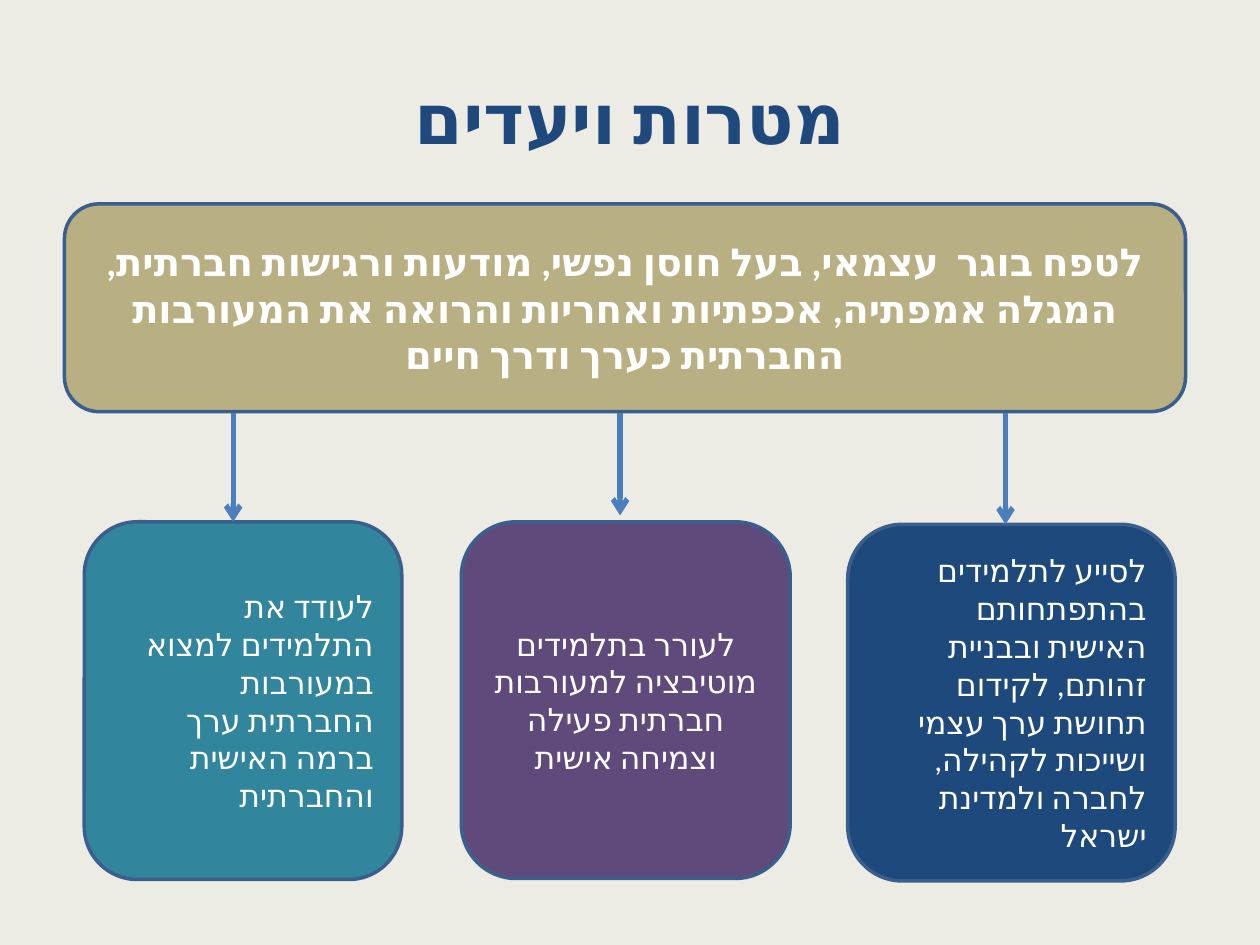
import pptx
import pptx.dml.color
import pptx.enum.shapes
import pptx.enum.text
import pptx.oxml
import pptx.oxml.ns
import pptx.util
from dataclasses import dataclass

Cm = pptx.util.Cm
Pt = pptx.util.Pt
CENTER = pptx.enum.text.PP_ALIGN.CENTER
RIGHT = pptx.enum.text.PP_ALIGN.RIGHT


@dataclass(frozen=True)
class Theme:
    background: str = "ECEBE4"
    title: str = "1F497D"
    text: str = "FFFFFF"
    vision: str = "B8AF82"
    outline: str = "3A5F8C"
    arrow: str = "4B7EBC"
    title_font: str = "Roboto"
    body_font: str = "Calibri"
    title_size: int = 40
    vision_size: int = 22
    goal_size: int = 18
    outline_width: int = 2
    arrow_width: int = 3


THEME = Theme()

TITLE = "מטרות ויעדים"
TITLE_BOX = (1.27, 0.76, 22.86, 3.18)
VISION = (
    "לטפח בוגר  עצמאי, בעל חוסן נפשי, מודעות ורגישות חברתית, "
    "המגלה אמפתיה, אכפתיות ואחריות והרואה את המעורבות "
    "החברתית כערך ודרך חיים"
)
VISION_BOX = (1.3, 4.11, 22.6, 4.19)
GOALS = [
    {
        "text": "לסייע לתלמידים בהתפתחותם האישית ובבניית זהותם, לקידום "
                "תחושת ערך עצמי ושייכות לקהילה, לחברה ולמדינת ישראל",
        "box": (17.09, 10.57, 6.6, 7.19),
        "fill": "1E497C", "alignment": RIGHT, "arrow": (20.27, 10.57),
    },
    {
        "text": "לעורר בתלמידים מוטיבציה למעורבות חברתית פעילה וצמיחה אישית",
        "box": (9.3, 10.52, 6.63, 7.19),
        "fill": "604A7B", "alignment": CENTER, "arrow": (12.5, 10.39),
    },
    {
        "text": "לעודד את התלמידים למצוא במעורבות החברתית ערך ברמה האישית והחברתית",
        "box": (1.7, 10.52, 6.4, 7.21),
        "fill": "31859C", "alignment": RIGHT, "arrow": (4.7, 10.52),
    },
]
ARROW_TOP = 8.33


def color(value):
    return pptx.dml.color.RGBColor.from_string(value)


def lengths(values):
    return [Cm(value) for value in values]


def add_child(parent, tag, **attributes):
    child = pptx.oxml.parse_xml(f"<{tag} {pptx.oxml.ns.nsdecls('a')}/>")
    for name, value in attributes.items():
        child.set(name, value)
    parent.append(child)


def write_text(shape, text, font, size, text_color, bold=False, alignment=CENTER):
    frame = shape.text_frame
    frame.word_wrap = True
    frame.vertical_anchor = pptx.enum.text.MSO_ANCHOR.MIDDLE
    paragraph = frame.paragraphs[0]
    paragraph.alignment = alignment
    paragraph._p.get_or_add_pPr().set("rtl", "1")
    run = paragraph.add_run()
    run.text = text
    run.font.name = font
    run.font.size = Pt(size)
    run.font.bold = bold
    run.font.color.rgb = color(text_color)
    properties = run._r.get_or_add_rPr()
    properties.set("lang", "he-IL")
    add_child(properties, "a:cs", typeface=font)


def add_card(slide, box, fill, text, size, bold=False, alignment=CENTER):
    rounded = pptx.enum.shapes.MSO_SHAPE.ROUNDED_RECTANGLE
    shape = slide.shapes.add_shape(rounded, *lengths(box))
    shape.shadow.inherit = False
    shape.fill.solid()
    shape.fill.fore_color.rgb = color(fill)
    shape.line.color.rgb = color(THEME.outline)
    shape.line.width = Pt(THEME.outline_width)
    write_text(shape, text, THEME.body_font, size, THEME.text, bold, alignment)


def add_arrow(slide, left, bottom):
    straight = pptx.enum.shapes.MSO_CONNECTOR.STRAIGHT
    ends = lengths((left, ARROW_TOP, left, bottom))
    connector = slide.shapes.add_connector(straight, *ends)
    connector.line.color.rgb = color(THEME.arrow)
    connector.line.width = Pt(THEME.arrow_width)
    add_child(connector.line._get_or_add_ln(), "a:tailEnd", type="arrow")
    add_child(connector._element.spPr, "a:effectLst")


def main():
    """Build the goals slide: a title, one vision and three goals."""
    presentation = pptx.Presentation()
    presentation.slide_width, presentation.slide_height = lengths((25.4, 19.05))
    slide = presentation.slides.add_slide(presentation.slide_layouts[6])
    slide.background.fill.solid()
    slide.background.fill.fore_color.rgb = color(THEME.background)

    title = slide.shapes.add_textbox(*lengths(TITLE_BOX))
    write_text(title, TITLE, THEME.title_font, THEME.title_size, THEME.title, bold=True)
    add_card(slide, VISION_BOX, THEME.vision, VISION, THEME.vision_size, bold=True)
    for goal in GOALS:
        add_card(slide, goal["box"], goal["fill"], goal["text"],
                 THEME.goal_size, alignment=goal["alignment"])
    for goal in GOALS:
        add_arrow(slide, *goal["arrow"])
    presentation.save("out.pptx")


if __name__ == "__main__":
    main()
